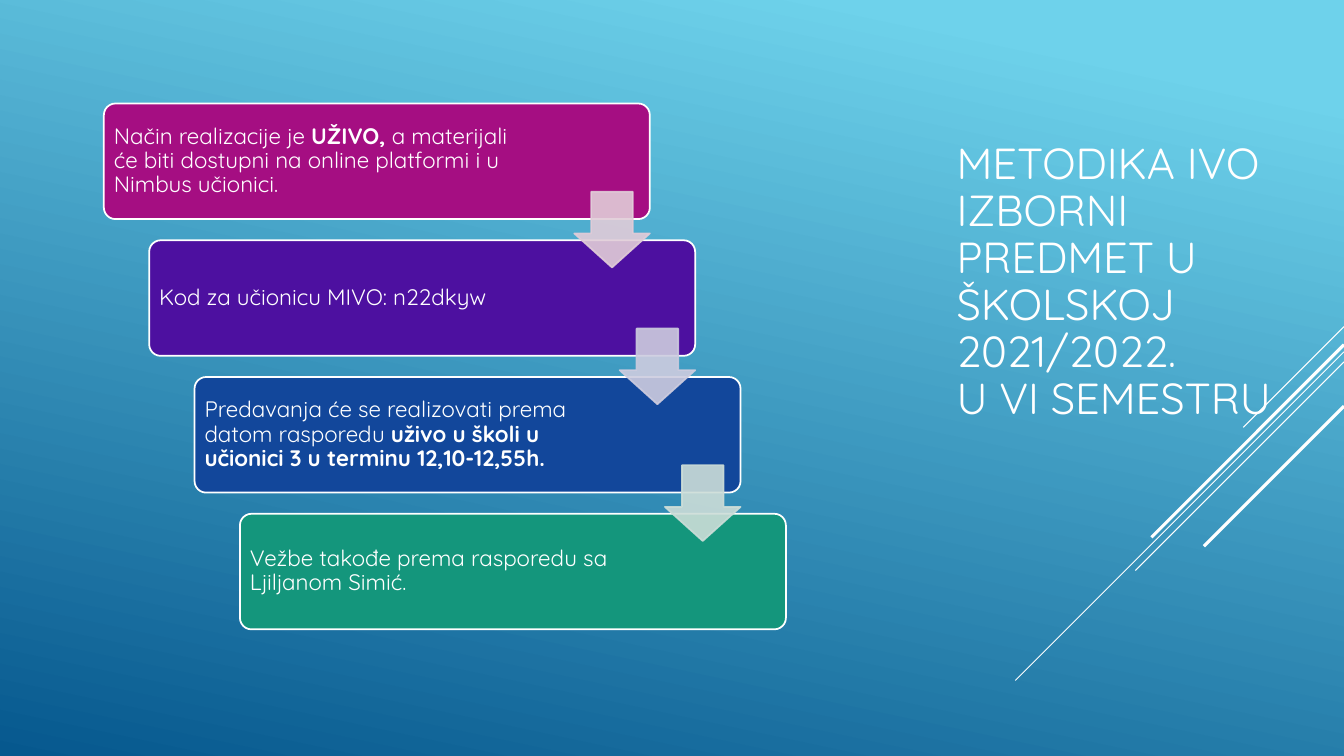
from dataclasses import dataclass

from lxml import etree
from pptx import Presentation
from pptx import util as u
from pptx.dml.color import RGBColor
from pptx.enum import shapes, text
from pptx.oxml import ns


@dataclass(frozen=True)
class Theme:
    """Colours, font and point sizes of the deck."""
    font: str = "Quicksand"
    white: str = "FFFFFF"
    sky: str = "6ED2EB"
    sea: str = "06588E"
    steps: tuple = ("A50E82", "4D10A0", "12479B", "14967C")
    arrows: tuple = ("E1CCD8", "CDCCDF", "CCDDD8")
    arrow_alpha: int = 90
    title_size: float = 31
    body_size: float = 16
    outline: float = 1.25
    thin: float = 0.75
    thick: float = 2.25


class SlideBuilder:
    """Draws themed elements on a slide using a grid of 40 columns by 22.5 rows."""
    COLUMNS, ROWS = 40, 22.5

    def __init__(self, deck, theme):
        """Add a title-only page to the deck."""
        self.deck, self.theme = deck, theme
        self.page = deck.slides.add_slide(deck.slide_layouts[5])

    def place(self, left, top, width, height):
        """Convert grid units to slide lengths."""
        column = self.deck.slide_width / self.COLUMNS
        row = self.deck.slide_height / self.ROWS
        return [u.Emu(round(n)) for n in
                (left * column, top * row, width * column, height * row)]

    def shape(self, kind, area, adjustments=()):
        """Add a preset shape without a shadow."""
        shape = self.page.shapes.add_shape(kind, *self.place(*area))
        shape.shadow.inherit = False
        for index, value in enumerate(adjustments):
            shape.adjustments[index] = value
        return shape

    def backdrop(self):
        """Cover the page with the slanted blue gradient."""
        panel = self.shape(shapes.MSO_SHAPE.RECTANGLE, (0, 0, self.COLUMNS, self.ROWS))
        panel.line.fill.background()
        panel.fill.gradient()
        panel.fill.gradient_angle = 258
        colors = (self.theme.sky, self.theme.sea)
        for stop, color, position in zip(panel.fill.gradient_stops, colors, (0.1, 1)):
            stop.color.rgb = RGBColor.from_string(color)
            stop.position = position

    def diagonal(self, top, run, weight):
        """Draw a 45-degree line down and left from the right edge."""
        right, start, reach, drop = self.place(self.COLUMNS, top, run, run)
        line = self.page.shapes.add_connector(
            shapes.MSO_CONNECTOR.STRAIGHT, right, start, right - reach, start + drop)
        line.line.color.rgb = RGBColor.from_string(self.theme.white)
        line.line.width = u.Pt(weight)
        etree.SubElement(line.element.spPr, ns.qn("a:effectLst"))

    def filled(self, kind, area, adjustments, fill, outline, alpha=100):
        """Add a filled and outlined shape, optionally translucent."""
        shape = self.shape(kind, area, adjustments)
        shape.fill.solid()
        shape.fill.fore_color.rgb = RGBColor.from_string(fill)
        shape.line.color.rgb = RGBColor.from_string(outline)
        shape.line.width = u.Pt(self.theme.outline)
        if alpha < 100:
            for color in shape.element.spPr.iter(ns.qn("a:srgbClr")):
                etree.SubElement(color, ns.qn("a:alpha"), val=str(alpha * 1000))

    def style(self, frame, size):
        """Apply the shared frame and paragraph formatting."""
        frame.word_wrap = True
        frame.auto_size = text.MSO_AUTO_SIZE.NONE
        frame.vertical_anchor = text.MSO_ANCHOR.MIDDLE
        for para in frame.paragraphs:
            para.alignment = text.PP_ALIGN.LEFT
            para.line_spacing = 0.9
            para.font.name = self.theme.font
            para.font.size = u.Pt(size)
            para.font.color.rgb = RGBColor.from_string(self.theme.white)

    def title(self, area, wording):
        """Fill and format the title placeholder and bring it to the front."""
        box = self.page.shapes.title
        box.left, box.top, box.width, box.height = self.place(*area)
        box.text_frame.text = wording
        self.style(box.text_frame, self.theme.title_size)
        box.element.getparent().append(box.element)

    def label(self, area, spans):
        """Add a text box of (wording, bold) spans."""
        box = self.page.shapes.add_textbox(*self.place(*area))
        frame = box.text_frame
        frame.margin_left = frame.margin_right = u.Inches(0.07)
        frame.margin_top = frame.margin_bottom = u.Inches(0.07)
        for wording, bold in spans:
            span = frame.paragraphs[0].add_run()
            span.text = wording
            span.font.bold = bold
        self.style(frame, self.theme.body_size)

    def staircase(self, steps):
        """Lay out the steps diagonally, then the arrows between them."""
        corners = [(3.09 + 1.35 * i, 3.08 + 4.07 * i) for i in range(len(steps))]
        for (left, top), fill, spans in zip(corners, self.theme.steps, steps):
            self.filled(shapes.MSO_SHAPE.ROUNDED_RECTANGLE, (left, top, 16.25, 3.44),
                        (0.1,), fill, self.theme.white)
            self.label((left + 0.09, top + 0.1, 12.45, 3.24), spans)
        for (left, top), color in zip(corners, self.theme.arrows):
            self.filled(shapes.MSO_SHAPE.DOWN_ARROW, (left + 14, top + 2.63, 2.25, 2.25),
                        (0.55, 0.45), color, color, self.theme.arrow_alpha)


STEPS = [
    [("Način realizacije je ", False), ("UŽIVO, ", True),
     ("a materijali će biti dostupni na online platformi i u Nimbus učionici.", False)],
    [("Kod za učionicu MIVO: n22dkyw", False)],
    [("Predavanja će se realizovati prema datom rasporedu ", False),
     ("uživo u školi u učionici 3 u terminu 12,10-12,55h.", True)],
    [("Vežbe takođe prema rasporedu sa Ljiljanom Simić.", False)],
]
TITLE = "METODIKA IVO\vIZBORNI PREDMET U ŠKOLSKOJ 2021/2022.\vU VI SEMESTRU"


def main():
    """Build and save the deck."""
    deck = Presentation()
    deck.slide_width, deck.slide_height = u.Inches(13.33), u.Inches(7.5)
    theme = Theme()
    builder = SlideBuilder(deck, theme)
    builder.backdrop()
    for top, run, weight in ((9.72, 3, theme.thin), (10.47, 9.78, theme.thin),
                             (10.77, 6.21, theme.thin), (10.26, 5.73, theme.thick),
                             (12.09, 4.17, theme.thick)):
        builder.diagonal(top, run, weight)
    builder.title((28.17, 3.09, 10, 10.65), TITLE)
    builder.staircase(STEPS)
    deck.save("out.pptx")


if __name__ == "__main__":
    main()
